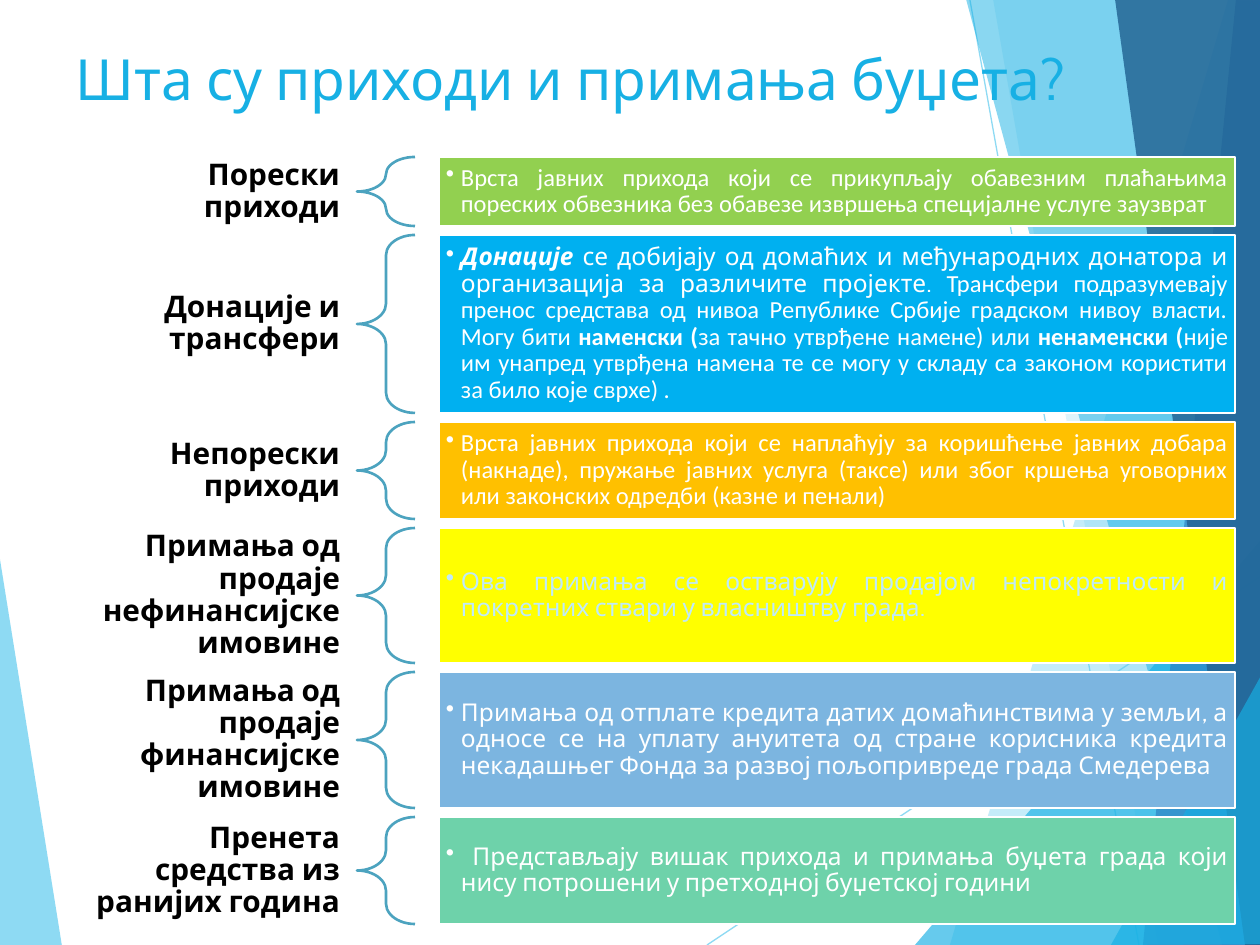
from lxml import etree
from pptx import Presentation
from pptx import util as u
from pptx.dml.color import RGBColor
from pptx.enum import shapes, text
from pptx.oxml.ns import qn

COLORS = {
    "sky": "5FCBEF", "azure": "17B0E4", "blue": "2E83C3", "navy": "226292",
    "brace": "4CA3BF", "white": "FFFFFF", "black": "000000", "pale": "BFEAF9",
    "taxes": "92D050", "grants": "00B0F0", "fees": "FFC000",
    "property": "FFFF00", "loans": "7CB5E0", "surplus": "6ED2AA",
}
TITLE = "Шта су приходи и примања буџета?"

ROWS = [
    ("Порески приходи", "taxes", 69, "white", [
        ("Врста јавних прихода који се прикупљају обавезним плаћањима пореских обвезника "
         "без обавезе извршења специјалне услуге заузврат", "Calibri", False, False)]),
    ("Донације и трансфери", "grants", 178, "white", [
        ("Донације ", "Cabin", True, True),
        ("се добијају од домаћих и међународних донатора и организација за различите "
         "пројекте. ", "Cabin", False, False),
        ("Трансфери подразумевају пренос средстава од нивоа Републике Србије градском "
         "нивоу власти. Могу бити ", "Calibri", False, False),
        ("наменски (", "Calibri", True, False),
        ("за тачно утврђене намене) или ", "Calibri", False, False),
        ("ненаменски (", "Calibri", True, False),
        ("није им унапред утврђена намена те се могу у складу са законом користити "
         "за било које сврхе) .", "Calibri", False, False)]),
    ("Непорески приходи", "fees", 97, "white", [
        ("Врста јавних прихода који се наплаћују за коришћење јавних добара (накнаде), "
         "пружање јавних услуга (таксе) или због кршења уговорних или законских одредби "
         "(казне и пенали)", "Calibri", False, False)]),
    ("Примања од продаје нефинансијске имовине", "property", 135, "pale", [
        ("Ова примања се остварују продајом непокретности и покретних ствари у "
         "власништву града.", "Cabin", False, False)]),
    ("Примања од продаје финансијске имовине", "loans", 136, "white", [
        ("Примања од отплате кредита датих домаћинствима у земљи, а односе се на уплату "
         "ануитета од стране корисника кредита некадашњег Фонда за развој пољопривреде "
         "града Смедерева", "Cabin", False, False)]),
    ("Пренета средства из ранијих година", "surplus", 107, "white", [
        (" Представљају вишак прихода и примања буџета града који нису потрошени у "
         "претходној буџетској години", "Cabin", False, False)]),
]
LEFT_FACET = ("sky", 70, [(-1, 553), (62, 946), (-1, 945)])
RAYS = [((707, 945), (1261, 576)), ((970, 0), (1139, 945))]
RIGHT_FACETS = [
    ("sky", 36, [(1228, 0), (950, 945), (1262, 946), (1261, 1)]),
    ("sky", 20, [(993, -1), (1158, 945), (1261, 945), (1261, -1)]),
    ("azure", 66, [(915, 945), (1260, 541), (1261, 945)]),
    ("azure", 50, [(966, -1), (1222, 945), (1261, 944), (1261, -1)]),
    ("blue", 70, [(1236, -1), (1143, 945), (1261, 945), (1260, -1)]),
    ("navy", 82, [(1115, -1), (1245, 945), (1262, 945), (1260, -1)]),
    ("azure", 66, [(1111, 945), (1262, 674), (1262, 944)]),
]
ROW_TOP, ROW_GAP = 157, 9
LABEL_X, LABEL_W = 63, 293
BRACE_X, BRACE_W = 357, 58
BODY_X, BODY_W = 439, 796
SCALE = 914400 / 126


def px(*values):
    return [round(value * SCALE) for value in values]


def rgb(name):
    return RGBColor.from_string(COLORS[name])


def set_alpha(fill_owner, percent):
    color = fill_owner.find(".//" + qn("a:srgbClr"))
    etree.SubElement(color, qn("a:alpha")).set("val", str(percent * 1000))


def add_facet(slide, color, alpha, points):
    builder = slide.shapes.build_freeform(*points[0], scale=SCALE)
    builder.add_line_segments(points[1:], close=True)
    facet = builder.convert_to_shape()
    facet.shadow.inherit = False
    facet.fill.solid()
    facet.fill.fore_color.rgb = rgb(color)
    set_alpha(facet.fill._xPr, alpha)
    facet.line.fill.background()


def add_ray(slide, start, end):
    ray = slide.shapes.add_connector(shapes.MSO_CONNECTOR.STRAIGHT, *px(*start, *end))
    ray.line.color.rgb = rgb("sky")
    ray.line.width = u.Pt(0.75)
    set_alpha(ray.line._ln, 70)
    etree.SubElement(ray._element.spPr, qn("a:effectLst"))


def style_run(run, size, color, font="Cabin", bold=False, italic=False):
    run.font.name = font
    run.font.size = u.Pt(size)
    run.font.color.rgb = rgb(color)
    run.font.bold = bold
    run.font.italic = italic


def set_frame(frame, inset_x, inset_y):
    frame.word_wrap = True
    frame.vertical_anchor = text.MSO_ANCHOR.MIDDLE
    frame.margin_left, frame.margin_right = px(inset_x, inset_x)
    frame.margin_top, frame.margin_bottom = px(inset_y, inset_y)


def add_text(slide, box, words, size, color, align, inset=13, bold=False):
    frame = slide.shapes.add_textbox(*px(*box)).text_frame
    set_frame(frame, inset, 6)
    frame.text = words
    paragraph = frame.paragraphs[0]
    paragraph.alignment = align
    style_run(paragraph.runs[0], size, color, bold=bold)
    return paragraph


def add_brace(slide, top, height):
    brace = slide.shapes.add_shape(
        shapes.MSO_SHAPE.LEFT_BRACE, *px(BRACE_X, top, BRACE_W, height))
    brace.adjustments[0], brace.adjustments[1] = 0.35, 0.5
    brace.shadow.inherit = False
    brace.fill.background()
    brace.line.color.rgb = rgb("brace")
    brace.line.width = u.Pt(1.5)


def add_body(slide, top, height, fill, color, runs):
    body = slide.shapes.add_shape(
        shapes.MSO_SHAPE.RECTANGLE, *px(BODY_X, top, BODY_W, height))
    body.shadow.inherit = False
    body.fill.solid()
    body.fill.fore_color.rgb = rgb(fill)
    body.line.color.rgb = rgb("white")
    body.line.width = u.Pt(1.5)
    set_frame(body.text_frame, 7, 7)
    paragraph = body.text_frame.paragraphs[0]
    paragraph.alignment = text.PP_ALIGN.JUSTIFY
    paragraph.line_spacing = 0.9
    indent = px(15)[0]
    properties = paragraph._p.get_or_add_pPr()
    properties.set("marL", str(indent))
    properties.set("indent", str(-indent))
    etree.SubElement(properties, qn("a:buChar")).set("char", "•")
    for words, font, bold, italic in runs:
        run = paragraph.add_run()
        run.text = words
        style_run(run, 14, color, font, bold, italic)


def main():
    deck = Presentation()
    deck.slide_width, deck.slide_height = px(1260, 945)
    slide = deck.slides.add_slide(deck.slide_layouts[6])

    add_facet(slide, *LEFT_FACET)
    for start, end in RAYS:
        add_ray(slide, start, end)
    for facet in RIGHT_FACETS:
        add_facet(slide, *facet)

    add_text(slide, (63, 35, 1134, 86), TITLE, 32.4, "azure", text.PP_ALIGN.LEFT)

    top = ROW_TOP
    for label, fill, height, color, runs in ROWS:
        heading = add_text(slide, (LABEL_X, top, LABEL_W, height), label, 17, "black",
                           text.PP_ALIGN.RIGHT, inset=16, bold=True)
        heading.line_spacing = 0.9
        add_brace(slide, top, height)
        add_body(slide, top, height, fill, color, runs)
        top += height + ROW_GAP

    deck.save("out.pptx")


if __name__ == "__main__":
    main()
